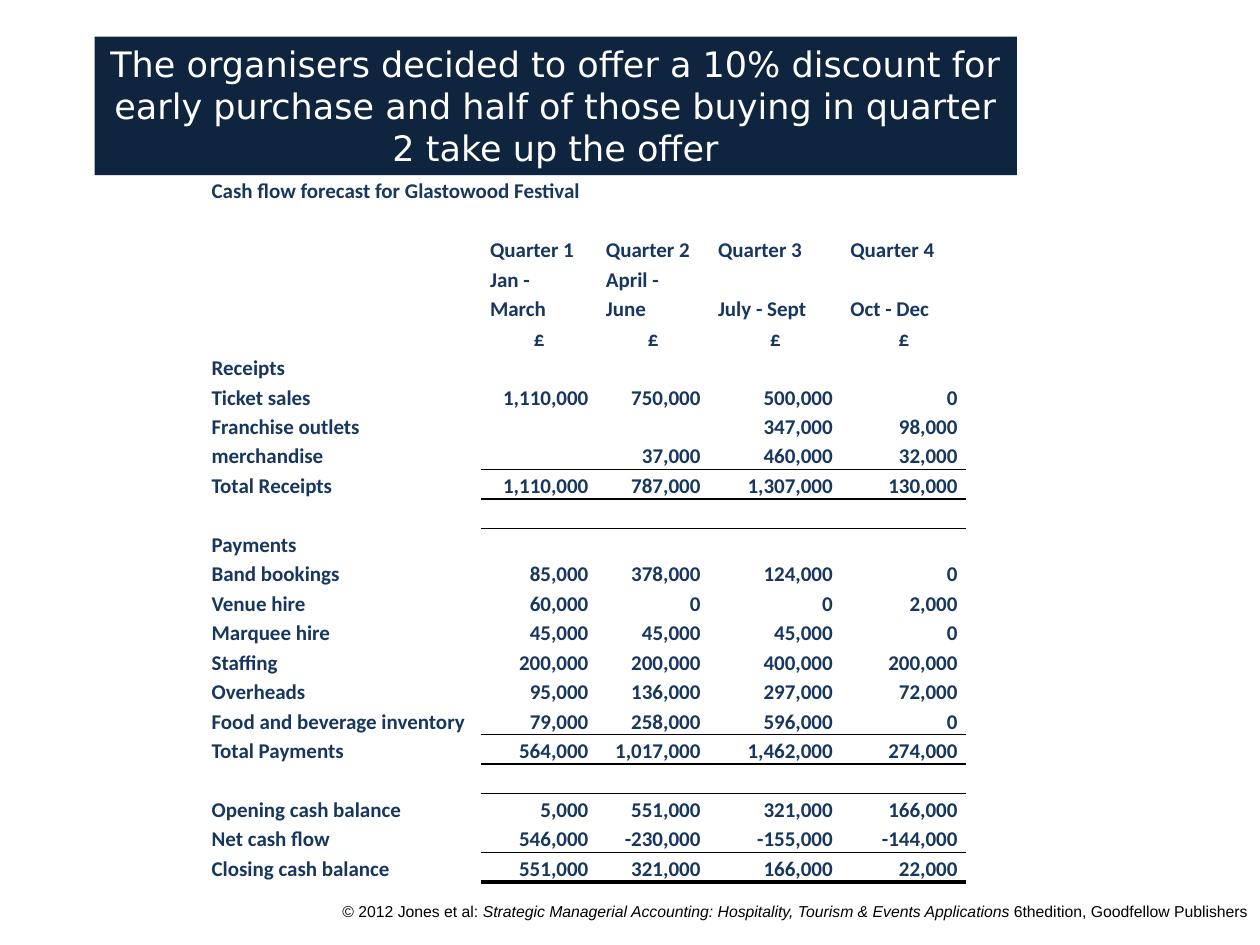
import dataclasses
import typing

import lxml.etree
import pptx
import pptx.dml.color
import pptx.enum.text
import pptx.oxml.ns
import pptx.text.text
import pptx.util

Inches = pptx.util.Inches
Pt = pptx.util.Pt
RGBColor = pptx.dml.color.RGBColor
Align = pptx.enum.text.PP_ALIGN
Anchor = pptx.enum.text.MSO_ANCHOR
qn = pptx.oxml.ns.qn

NAVY = RGBColor(0x0F, 0x24, 0x3E)
BLUE = RGBColor(0x17, 0x37, 0x5E)
WHITE = RGBColor(0xFF, 0xFF, 0xFF)
BLACK = RGBColor(0, 0, 0)

TITLE_FORMAT = {"name": "DejaVu Sans", "size": Pt(20), "bold": False}
CELL_FORMAT = {"name": "Calibri", "size": Pt(12), "bold": True}
CREDIT_FORMAT = {"name": "Arial", "size": Pt(9)}
CELL_LAYOUT = {
    "vertical_anchor": Anchor.BOTTOM,
    "margin_left": Inches(0.07),
    "margin_right": Inches(0.07),
    "margin_top": 0,
    "margin_bottom": 0,
}
PARAGRAPH_LAYOUT = {"line_spacing": 1.15, "space_after": Pt(10)}
NO_STYLE_NO_GRID = "{2D5ABB26-0587-4C30-8999-92F81FD0307C}"

COLUMN_WIDTHS = (2.21, 0.92, 0.89, 1.05, 0.99)
TABLE_HEIGHT = 5.59


@dataclasses.dataclass
class ForecastRow:
    label: str = ""
    quarters: tuple[str, ...] = ("", "", "", "")
    align: Align = Align.RIGHT
    rule: float = 0
    lines: int = 1


ROWS = (
    ForecastRow("Cash flow forecast for Glastowood Festival"),
    ForecastRow(),
    ForecastRow("", ("Quarter 1", "Quarter 2", "Quarter 3", "Quarter 4"), Align.LEFT),
    ForecastRow("", ("Jan - March", "April - June", "July - Sept", "Oct - Dec"), Align.LEFT, lines=2),
    ForecastRow("", ("£",) * 4, Align.CENTER),
    ForecastRow("Receipts"),
    ForecastRow("Ticket sales", ("1,110,000", "750,000", "500,000", "0")),
    ForecastRow("Franchise outlets", ("", "", "347,000", "98,000")),
    ForecastRow("merchandise", ("", "37,000", "460,000", "32,000"), rule=1),
    ForecastRow("Total Receipts", ("1,110,000", "787,000", "1,307,000", "130,000"), rule=1),
    ForecastRow(),
    ForecastRow("Payments"),
    ForecastRow("Band bookings", ("85,000", "378,000", "124,000", "0")),
    ForecastRow("Venue hire", ("60,000", "0", "0", "2,000")),
    ForecastRow("Marquee hire", ("45,000", "45,000", "45,000", "0")),
    ForecastRow("Staffing", ("200,000", "200,000", "400,000", "200,000")),
    ForecastRow("Overheads", ("95,000", "136,000", "297,000", "72,000")),
    ForecastRow("Food and beverage inventory", ("79,000", "258,000", "596,000", "0"), rule=1),
    ForecastRow("Total Payments", ("564,000", "1,017,000", "1,462,000", "274,000"), rule=1),
    ForecastRow(),
    ForecastRow("Opening cash balance", ("5,000", "551,000", "321,000", "166,000")),
    ForecastRow("Net cash flow", ("546,000", "-230,000", "-155,000", "-144,000"), rule=1),
    ForecastRow("Closing cash balance", ("551,000", "321,000", "166,000", "22,000"), rule=2.25),
)


def apply_format(target: typing.Any, values: dict[str, typing.Any]) -> None:
    for name, value in values.items():
        setattr(target, name, value)


def format_font(font: typing.Any, values: dict[str, typing.Any], color: RGBColor) -> None:
    apply_format(font, values)
    font.color.rgb = color


def add_border(cell: typing.Any, tag: str, weight: float, index: int) -> None:
    line = lxml.etree.Element(qn(tag), w=str(int(Pt(weight))))
    fill = lxml.etree.SubElement(line, qn("a:solidFill"))
    lxml.etree.SubElement(fill, qn("a:srgbClr"), val=str(BLACK))
    cell._tc.get_or_add_tcPr().insert(index, line)


def fill_cell(cell: typing.Any, text: str, align: Align) -> None:
    apply_format(cell, CELL_LAYOUT)
    cell.fill.background()
    paragraph = cell.text_frame.paragraphs[0]
    apply_format(paragraph, PARAGRAPH_LAYOUT)
    paragraph.alignment = align
    if text:
        run = paragraph.add_run()
        run.text = text
        font = run.font
    else:
        font = pptx.text.text.Font(paragraph._p.get_or_add_endParaRPr())
    format_font(font, CELL_FORMAT, BLUE)


def add_title(slide: typing.Any, text: str) -> None:
    title = slide.shapes.title
    apply_format(title, {"left": Inches(0.75), "top": Inches(0.29),
                         "width": Inches(7.32), "height": Inches(1.1)})
    title.fill.solid()
    title.fill.fore_color.rgb = NAVY
    frame = title.text_frame
    apply_format(frame, {"word_wrap": True, "vertical_anchor": Anchor.MIDDLE,
                         "auto_size": pptx.enum.text.MSO_AUTO_SIZE.NONE})
    paragraph = frame.paragraphs[0]
    paragraph.alignment = Align.CENTER
    run = paragraph.add_run()
    run.text = text
    format_font(run.font, TITLE_FORMAT, WHITE)


def add_forecast(slide: typing.Any, rows: tuple[ForecastRow, ...]) -> None:
    frame = slide.shapes.add_table(
        len(rows), len(COLUMN_WIDTHS), Inches(1.61), Inches(1.39),
        Inches(sum(COLUMN_WIDTHS)), Inches(TABLE_HEIGHT))
    table = frame.table
    apply_format(table, {"first_row": False, "horz_banding": False})
    table._tbl.tblPr.find(qn("a:tableStyleId")).text = NO_STYLE_NO_GRID
    for column, width in zip(table.columns, COLUMN_WIDTHS):
        column.width = Inches(width)
    line_height = TABLE_HEIGHT / sum(row.lines for row in rows)
    rule_above = 0
    for row_index, row in enumerate(rows):
        table.rows[row_index].height = Inches(line_height * row.lines)
        fill_cell(table.cell(row_index, 0), row.label, Align.LEFT)
        for column_index, value in enumerate(row.quarters, start=1):
            cell = table.cell(row_index, column_index)
            fill_cell(cell, value, row.align)
            if row.rule:
                add_border(cell, "a:lnB", row.rule, 0)
            if rule_above:
                add_border(cell, "a:lnT", rule_above, 0)
        rule_above = row.rule
    table.cell(0, 0).merge(table.cell(0, 2))


def add_credit(slide: typing.Any) -> None:
    box = slide.shapes.add_textbox(Inches(2.23), Inches(7.11), Inches(7.77), Inches(0.39))
    box.text_frame.word_wrap = True
    paragraph = box.text_frame.paragraphs[0]
    paragraph.alignment = Align.RIGHT
    for text, italic in (
        ("© 2012 Jones et al: ", False),
        ("Strategic Managerial Accounting: Hospitality, Tourism & Events Applications ", True),
        ("6thedition, Goodfellow Publishers", False),
    ):
        run = paragraph.add_run()
        run.text = text
        format_font(run.font, {**CREDIT_FORMAT, "italic": italic}, BLACK)


def main() -> None:
    presentation = pptx.Presentation()
    presentation.slide_width = Inches(10)
    presentation.slide_height = Inches(7.5)
    slide = presentation.slides.add_slide(presentation.slide_layouts.get_by_name("Title Only"))
    add_title(slide, "The organisers decided to offer a 10% discount for early purchase "
                     "and half of those buying in quarter 2 take up the offer")
    add_forecast(slide, ROWS)
    add_credit(slide)
    presentation.save("out.pptx")


if __name__ == "__main__":
    main()
